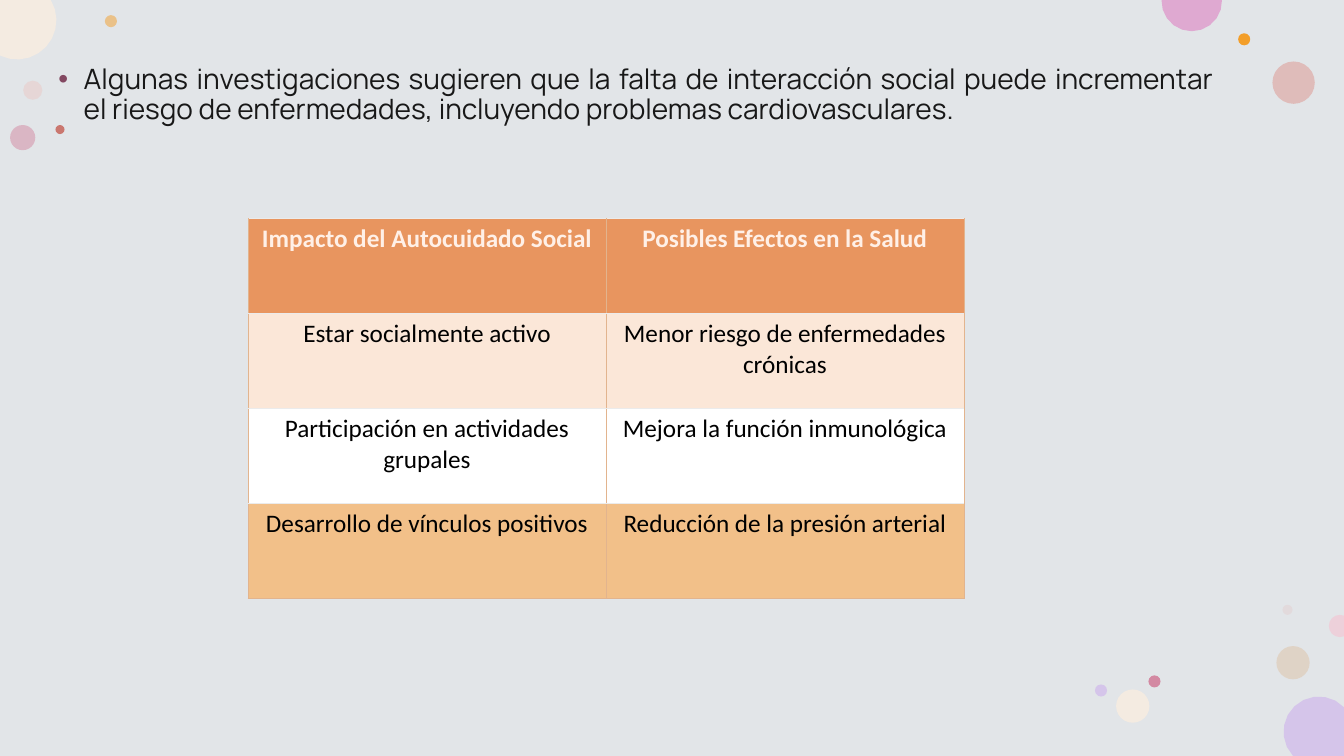
import math
from dataclasses import dataclass

import pptx
import pptx.dml.color
import pptx.enum.shapes
import pptx.enum.text
import pptx.oxml
import pptx.oxml.ns
import pptx.util
from pptx.util import Inches, Pt


@dataclass(frozen=True)
class Theme:
    background: str = "E2E5E8"
    bullet: str = "834861"
    body_text: str = "181818"
    header_text: str = "FFF0E7"
    cell_text: str = "000000"
    row_fills: tuple = ("E8955F", "FBE7D8", "FFFFFF", "F2C089")
    side_border: str = "E2B48E"
    row_border: str = "EBEBEB"
    border_width: float = 0.6
    body_font: str = "Manrope"
    table_font: str = "Calibri"
    body_size: int = 20
    table_size: int = 18


THEME = Theme()
SLIDE_WIDTH, SLIDE_HEIGHT = 13.33, 7.5

STATEMENT = (
    "Algunas investigaciones sugieren que la falta de interacción social puede "
    "incrementar el riesgo de enfermedades, incluyendo problemas cardiovasculares."
)
STATEMENT_BOX = (0.48, 0.6, 11.66, 4.76)

HEALTH_EFFECTS = [
    ("Impacto del Autocuidado Social", "Posibles Efectos en la Salud"),
    ("Estar socialmente activo", "Menor riesgo de enfermedades crónicas"),
    ("Participación en actividades grupales", "Mejora la función inmunológica"),
    ("Desarrollo de vínculos positivos", "Reducción de la presión arterial"),
]
TABLE_BOX = (2.46, 2.17, 7.1, 3.77)

# left, top, diameter, colour, opacity in percent
BUBBLES = [
    (0.23, 0.8, 0.19, "EAC9C5", 50),
    (1.04, 0.15, 0.12, "F39E29", 50),
    (12.66, 6.41, 0.33, "DEC2A6", 50),
    (0.1, 1.24, 0.25, "D389A2", 50),
    (12.62, 0.61, 0.42, "DFADA9", 72),
    (12.28, 0.33, 0.12, "F39E29", 100),
    (12.72, 6, 0.1, "E3BEBE", 28),
    (11.39, 6.7, 0.12, "D389A2", 100),
    (11.07, 6.84, 0.33, "F4EBE1", 100),
    (10.86, 6.79, 0.12, "D5C5EA", 100),
    (0.55, 1.24, 0.09, "CA776F", 100),
]

# centre x, centre y, radius, first and last visible degree, slide corners, colour
EDGE_BUBBLES = [
    (13.08, 7.26, 0.35, 137, 316, [(SLIDE_WIDTH, SLIDE_HEIGHT)], "D5C5EA"),
    (0.17, 0.2, 0.39, -31, 116, [(0, 0)], "F4EBE1"),
    (11.82, 0.01, 0.3, -2, 182, [], "DFA9D1"),
    (13.29, 6.21, 0.11, 69, 291, [], "EDD0DA"),
]
ARC_STEPS = 10


def rgb(color):
    return pptx.dml.color.RGBColor.from_string(color)


def xml(tag, attributes="", content=""):
    """Return a DrawingML element built from its tag, attributes and content."""
    namespace = pptx.oxml.ns.nsdecls("a")
    return pptx.oxml.parse_xml(f"<a:{tag} {namespace} {attributes}>{content}</a:{tag}>")


def paint(bubble, color, opacity=100):
    bubble.fill.solid()
    bubble.fill.fore_color.rgb = rgb(color)
    bubble.line.fill.background()
    bubble.shadow.inherit = False
    if opacity < 100:
        swatch = bubble.fill._xPr.find(".//" + pptx.oxml.ns.qn("a:srgbClr"))
        swatch.append(xml("alpha", f'val="{opacity * 1000}"'))


def add_bubbles(slide):
    for left, top, diameter, color, opacity in BUBBLES:
        bubble = slide.shapes.add_shape(
            pptx.enum.shapes.MSO_SHAPE.OVAL,
            *map(Inches, (left, top, diameter, diameter)),
        )
        paint(bubble, color, opacity)


def add_edge_bubbles(slide):
    """Draw circles whose outline stops at the slide edges."""
    for center_x, center_y, radius, first, last, corners, color in EDGE_BUBBLES:
        outline = []
        for step in range(ARC_STEPS + 1):
            angle = math.radians(first + (last - first) * step / ARC_STEPS)
            x = center_x + radius * math.cos(angle)
            y = center_y + radius * math.sin(angle)
            outline.append((min(max(x, 0), SLIDE_WIDTH), min(max(y, 0), SLIDE_HEIGHT)))
        points = [(Inches(x), Inches(y)) for x, y in outline + corners]
        builder = slide.shapes.build_freeform(*points[0])
        builder.add_line_segments(points[1:], close=True)
        paint(builder.convert_to_shape(), color)


def format_font(font, name, size, color, bold=False):
    font.name = name
    font.size = Pt(size)
    font.bold = bold
    font.color.rgb = rgb(color)


def fill_statement(body):
    body.left, body.top, body.width, body.height = map(Inches, STATEMENT_BOX)
    frame = body.text_frame
    frame.text = STATEMENT
    frame.word_wrap = True
    frame.auto_size = pptx.enum.text.MSO_AUTO_SIZE.NONE
    frame.vertical_anchor = pptx.enum.text.MSO_ANCHOR.TOP
    statement = frame.paragraphs[0]
    properties = statement._p.get_or_add_pPr()
    properties.set("marL", str(Inches(0.25)))
    properties.set("indent", str(Inches(-0.25)))
    properties.append(xml("buClr", content=f'<a:srgbClr val="{THEME.bullet}"/>'))
    properties.append(xml("buFont", 'typeface="Arial"'))
    properties.append(xml("buChar", 'char="•"'))
    statement.alignment = pptx.enum.text.PP_ALIGN.JUSTIFY
    statement.line_spacing = 0.9
    statement.space_before = Pt(0)
    format_font(statement.font, THEME.body_font, THEME.body_size, THEME.body_text)


def set_borders(cell, bottom_color):
    sides = {"lnL": THEME.side_border, "lnR": THEME.side_border,
             "lnT": THEME.row_border, "lnB": bottom_color}
    properties = cell._tc.get_or_add_tcPr()
    for position, (side, color) in enumerate(sides.items()):
        fill = f'<a:solidFill><a:srgbClr val="{color}"/></a:solidFill>'
        border = xml(side, f'w="{Pt(THEME.border_width)}"', fill)
        properties.insert(position, border)


def add_effects_table(slide):
    table = slide.shapes.add_table(
        len(HEALTH_EFFECTS), len(HEALTH_EFFECTS[0]), *map(Inches, TABLE_BOX)
    ).table
    last_row = len(HEALTH_EFFECTS) - 1
    for row, entries in enumerate(HEALTH_EFFECTS):
        is_header = row == 0
        text_color = THEME.header_text if is_header else THEME.cell_text
        bottom_color = THEME.side_border if row == last_row else THEME.row_border
        for column, entry in enumerate(entries):
            cell = table.cell(row, column)
            cell.text = entry
            cell.fill.solid()
            cell.fill.fore_color.rgb = rgb(THEME.row_fills[row])
            set_borders(cell, bottom_color)
            label = cell.text_frame.paragraphs[0]
            label.alignment = pptx.enum.text.PP_ALIGN.CENTER
            format_font(label.font, THEME.table_font, THEME.table_size,
                        text_color, is_header)


def main():
    presentation = pptx.Presentation()
    presentation.slide_width = Inches(SLIDE_WIDTH)
    presentation.slide_height = Inches(SLIDE_HEIGHT)
    slide = presentation.slides.add_slide(presentation.slide_layouts[1])
    slide.background.fill.solid()
    slide.background.fill.fore_color.rgb = rgb(THEME.background)
    unused_title = slide.shapes.title.element
    unused_title.getparent().remove(unused_title)
    add_bubbles(slide)
    add_edge_bubbles(slide)
    fill_statement(slide.placeholders[1])
    add_effects_table(slide)
    presentation.save("out.pptx")


if __name__ == "__main__":
    main()
